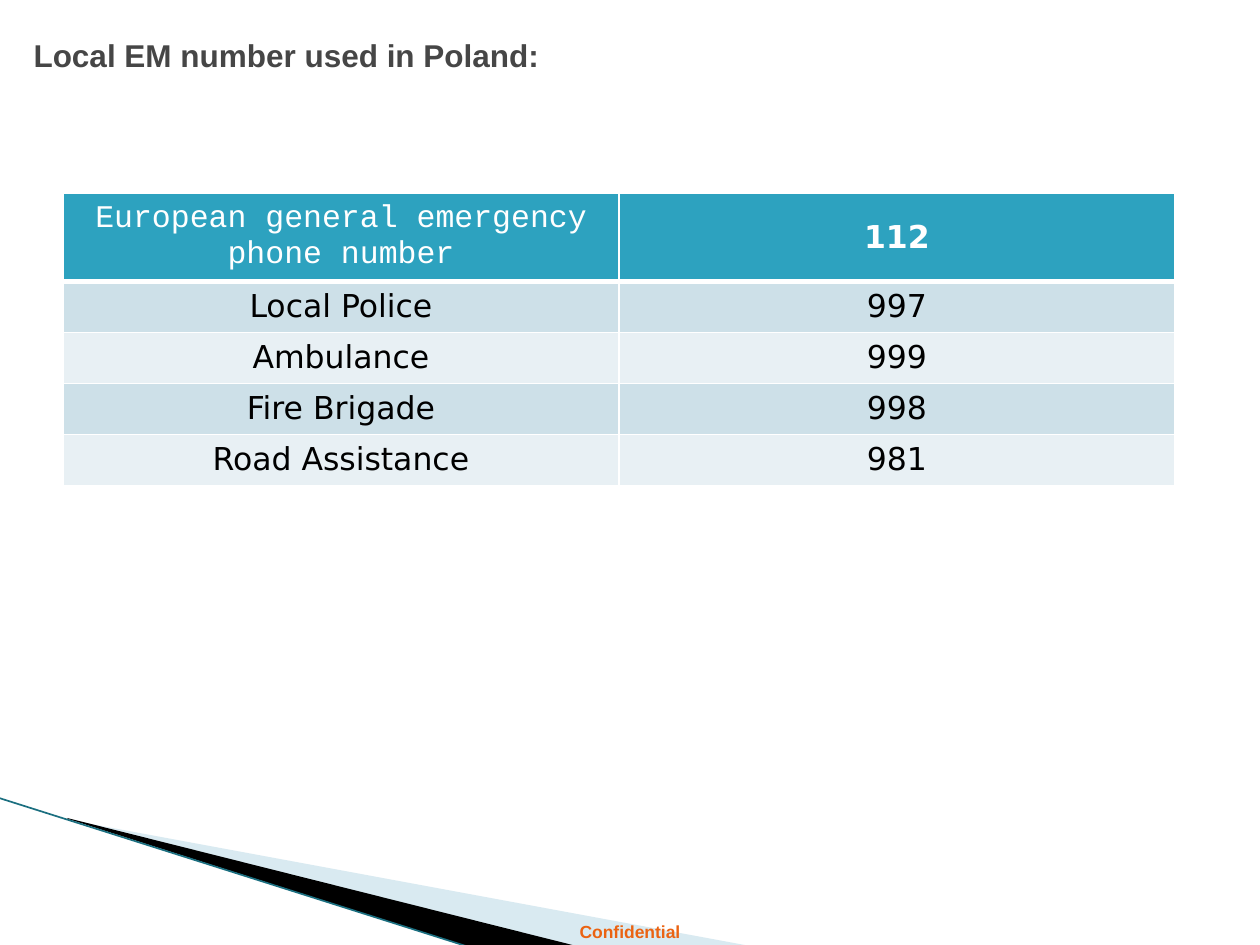
"""Build the slide of local emergency numbers in Poland."""
from lxml import etree
from pptx import Presentation, util as u
from pptx.dml.color import RGBColor
from pptx.enum import shapes, text
from pptx.oxml.ns import qn

WHITE = RGBColor(0xFF, 0xFF, 0xFF)
BLACK = RGBColor(0, 0, 0)
GRAY = RGBColor(0x46, 0x46, 0x46)
ORANGE = RGBColor(0xEB, 0x63, 0x12)
TEAL = RGBColor(0x2D, 0xA2, 0xBF)
DEEP = RGBColor(0x1B, 0x6F, 0x80)
SKY = RGBColor(0xA0, 0xCB, 0xDC)
BANDS = RGBColor(0xCD, 0xE0, 0xE8), RGBColor(0xE8, 0xF0, 0xF4)

TITLE = "Local EM number used in Poland:"
FOOT = "Confidential"
ROWS = [
    ("European general emergency phone number", "112"),
    ("Local Police", "997"),
    ("Ambulance", "999"),
    ("Fire Brigade", "998"),
    ("Road Assistance", "981"),
]
WEDGES = [
    (SKY, 40, [(69, 820), (750, 946), (575, 946), (69, 819)]),
    (BLACK, 100, [(67, 818), (576, 946), (469, 947), (68, 819)]),
]
EDGE = (-1, 798, 469, 947)
HEAD, ROW, COL = 83, 51, 556
SCALE = 914400 / 126


def px(*vals):
    return [round(v * SCALE) for v in vals]


def style(para, color, **form):
    para.font.color.rgb = color
    for key, val in form.items():
        setattr(para.font, key, val)


def border(cell, top):
    props = cell._tc.get_or_add_tcPr()
    for side in "LRTB":
        thick = 3 if (top and side == "B") or (top is None and side == "T") else 1
        line = etree.SubElement(props, qn("a:ln" + side), w=str(u.Pt(thick)))
        fill = etree.SubElement(line, qn("a:solidFill"))
        etree.SubElement(fill, qn("a:srgbClr"), val=str(WHITE))


def wedge(slide, color, alpha, pts):
    form = slide.shapes.build_freeform(*pts[0], scale=SCALE)
    form.add_line_segments(pts[1:], close=True)
    shape = form.convert_to_shape()
    shape.shadow.inherit = False
    shape.fill.solid()
    shape.fill.fore_color.rgb = color
    shape.line.fill.background()
    if alpha < 100:
        tint = shape._element.spPr.find(".//" + qn("a:srgbClr"))
        etree.SubElement(tint, qn("a:alpha"), val=str(alpha * 1000))


def grid(slide):
    size = px(63, 193, 2 * COL, HEAD + ROW * (len(ROWS) - 1))
    table = slide.shapes.add_table(len(ROWS), 2, *size).table
    for r, row in enumerate(ROWS):
        top = r == 0
        table.rows[r].height = px(HEAD if top else ROW)[0]
        for c, word in enumerate(row):
            cell = table.cell(r, c)
            border(cell, None if r == 1 else top)
            cell.fill.solid()
            cell.fill.fore_color.rgb = TEAL if top else BANDS[(r - 1) % 2]
            cell.vertical_anchor = text.MSO_ANCHOR.MIDDLE
            cell.text = word
            para = cell.text_frame.paragraphs[0]
            para.alignment = text.PP_ALIGN.CENTER
            name = "Courier New" if top and c == 0 else "DejaVu Sans"
            style(para, WHITE if top else BLACK, name=name,
                  size=u.Pt(18), bold=top and c == 1)


def main():
    deck = Presentation()
    deck.slide_width, deck.slide_height = px(1260, 945)
    slide = deck.slides.add_slide(deck.slide_layouts[5])

    for item in WEDGES:
        wedge(slide, *item)
    edge = slide.shapes.add_connector(shapes.MSO_CONNECTOR.STRAIGHT, *px(*EDGE))
    edge.line.color.rgb = DEEP
    edge.line.width = u.Pt(0.95)
    etree.SubElement(edge._element.spPr, qn("a:effectLst"))

    foot = slide.shapes.add_textbox(*px(0, 915, 1260, 34)).text_frame
    foot.word_wrap = True
    foot.text = FOOT
    foot.paragraphs[0].alignment = text.PP_ALIGN.CENTER
    style(foot.paragraphs[0], ORANGE, name="Arial", size=u.Pt(10), bold=True)

    title = slide.shapes.title
    title.left, title.top, title.width, title.height = px(21, 21, 1134, 252)
    frame = title.text_frame
    frame.text = TITLE
    frame.vertical_anchor = text.MSO_ANCHOR.TOP
    frame.margin_top = px(15)[0]
    frame.paragraphs[0].alignment = text.PP_ALIGN.LEFT
    style(frame.paragraphs[0], GRAY, name="Arial", size=u.Pt(18), bold=True)

    grid(slide)
    deck.save("out.pptx")


if __name__ == "__main__":
    main()
